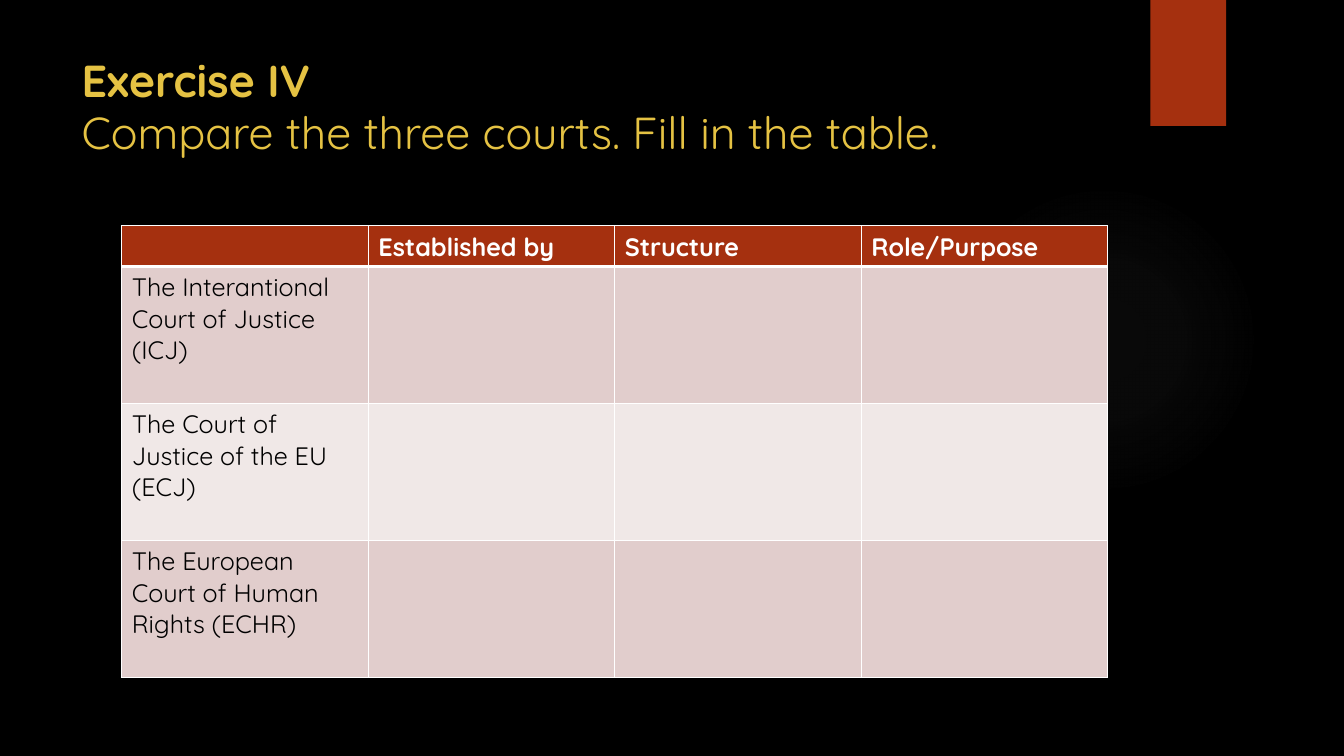
from dataclasses import dataclass

from lxml import etree
from pptx import Presentation
from pptx.dml.color import RGBColor
from pptx.enum.shapes import MSO_SHAPE
from pptx.enum.text import MSO_ANCHOR
from pptx.oxml import parse_xml
from pptx.oxml.ns import nsdecls
from pptx.util import Inches, Pt

RECT = MSO_SHAPE.RECTANGLE
OVAL = MSO_SHAPE.OVAL
TOP = MSO_ANCHOR.TOP
WIDE, HIGH = 13.33, 7.5
FONT = "Quicksand"
BLACK, WHITE, GOLD, RUST = "000000", "FFFFFF", "E5C243", "A5300F"
BANDS = ("E1CDCC", "F0E8E7")
THIN, THICK = 1, 3


@dataclass(frozen=True)
class Area:
    """A box in percent of the slide's width and height."""
    left: float
    top: float
    width: float
    height: float

    def box(self) -> tuple:
        return (Inches(WIDE * self.left / 100), Inches(HIGH * self.top / 100),
                Inches(WIDE * self.width / 100), Inches(HIGH * self.height / 100))


@dataclass(frozen=True)
class Row:
    texts: tuple
    fill: str
    color: str
    bold: bool


GLOW = Area(70.59, 24.4, 23.1, 41.07)
TAB = Area(85.6, 0, 5.63, 16.67)
TITLE = Area(5.33, 6.67, 77.19, 20.4)
GRID = Area(9.06, 29.87, 73.37, 59.73)
HEAD_SHARE = 0.09

HEADS = ("", "Established by", "Structure", "Role/Purpose")
COURTS = (
    "The Interantional Court of Justice (ICJ)",
    "The Court of Justice of the EU (ECJ)",
    "The European Court of Human Rights (ECHR)",
)
ROWS = [Row(HEADS, RUST, WHITE, True)] + [
    Row((court, "", "", ""), BANDS[i % 2], BLACK, False)
    for i, court in enumerate(COURTS)
]


def rgb(code: str) -> RGBColor:
    return RGBColor.from_string(code)


def add_run(para, text: str, size: int, color: str, bold: bool) -> None:
    run = para.add_run()
    run.text = text
    run.font.name = FONT
    run.font.size = Pt(size)
    run.font.bold = bold
    run.font.color.rgb = rgb(color)


def add_shape(slide, kind, area: Area):
    shape = slide.shapes.add_shape(kind, *area.box())
    shape.shadow.inherit = False
    shape.line.fill.background()
    return shape


def add_glow(slide) -> None:
    shape = add_shape(slide, OVAL, GLOW)
    shape.fill.background()
    stops = "".join(
        f'<a:gs pos="{pos}000"><a:srgbClr val="848484">'
        f'<a:alpha val="{alpha}000"/></a:srgbClr></a:gs>'
        for pos, alpha in ((0, 7), (36, 6), (69, 0)))
    props = shape.element.spPr
    blank = props.find("{*}noFill")
    props.replace(blank, parse_xml(
        f'<a:gradFill {nsdecls("a")} rotWithShape="1"><a:gsLst>{stops}</a:gsLst>'
        '<a:path path="circle"><a:fillToRect l="50000" t="50000" '
        'r="50000" b="50000"/></a:path></a:gradFill>'))


def add_tab(slide) -> None:
    shape = add_shape(slide, RECT, TAB)
    shape.fill.solid()
    shape.fill.fore_color.rgb = rgb(RUST)
    shape.element.spPr.find("{*}effectLst").append(parse_xml(
        f'<a:outerShdw {nsdecls("a")} blurRad="{Pt(3)}" dist="{Pt(2)}" '
        f'dir="5400000" rotWithShape="0"><a:srgbClr val="{BLACK}">'
        '<a:alpha val="45000"/></a:srgbClr></a:outerShdw>'))


def add_title(slide) -> None:
    frame = slide.shapes.add_textbox(*TITLE.box()).text_frame
    frame.word_wrap = True
    frame.vertical_anchor = TOP
    para = frame.paragraphs[0]
    para.line_spacing = 0.97
    add_run(para, "Exercise IV", 32, GOLD, True)
    para.add_line_break()
    add_run(para, "Compare the three courts. Fill in the table.", 32, GOLD, False)


def set_edge(cell, side: str, width: int) -> None:
    edge = parse_xml(
        f'<a:ln{side} {nsdecls("a")} w="{Pt(width)}"><a:solidFill>'
        f'<a:srgbClr val="{WHITE}"/></a:solidFill></a:ln{side}>')
    cell._tc.get_or_add_tcPr().append(edge)


def fill_cell(cell, row: Row, text: str, top: int, base: int) -> None:
    for side, width in (("L", THIN), ("R", THIN), ("T", top), ("B", base)):
        set_edge(cell, side, width)
    cell.fill.solid()
    cell.fill.fore_color.rgb = rgb(row.fill)
    if text:
        add_run(cell.text_frame.paragraphs[0], text, 18, row.color, row.bold)


def add_grid(slide) -> None:
    box = GRID.box()
    table = slide.shapes.add_table(len(ROWS), len(HEADS), *box).table
    head = int(box[3] * HEAD_SHARE)
    for r, row in enumerate(ROWS):
        table.rows[r].height = head if r == 0 else (box[3] - head) // len(COURTS)
        top = THICK if r == 1 else THIN
        base = THICK if r == 0 else THIN
        for c, text in enumerate(row.texts):
            fill_cell(table.cell(r, c), row, text, top, base)


def main() -> None:
    deck = Presentation()
    deck.slide_width, deck.slide_height = Inches(WIDE), Inches(HIGH)
    slide = deck.slides.add_slide(deck.slide_layouts[6])
    slide.background.fill.solid()
    slide.background.fill.fore_color.rgb = rgb(BLACK)
    add_glow(slide)
    add_tab(slide)
    add_title(slide)
    add_grid(slide)
    deck.save("out.pptx")


if __name__ == "__main__":
    main()
